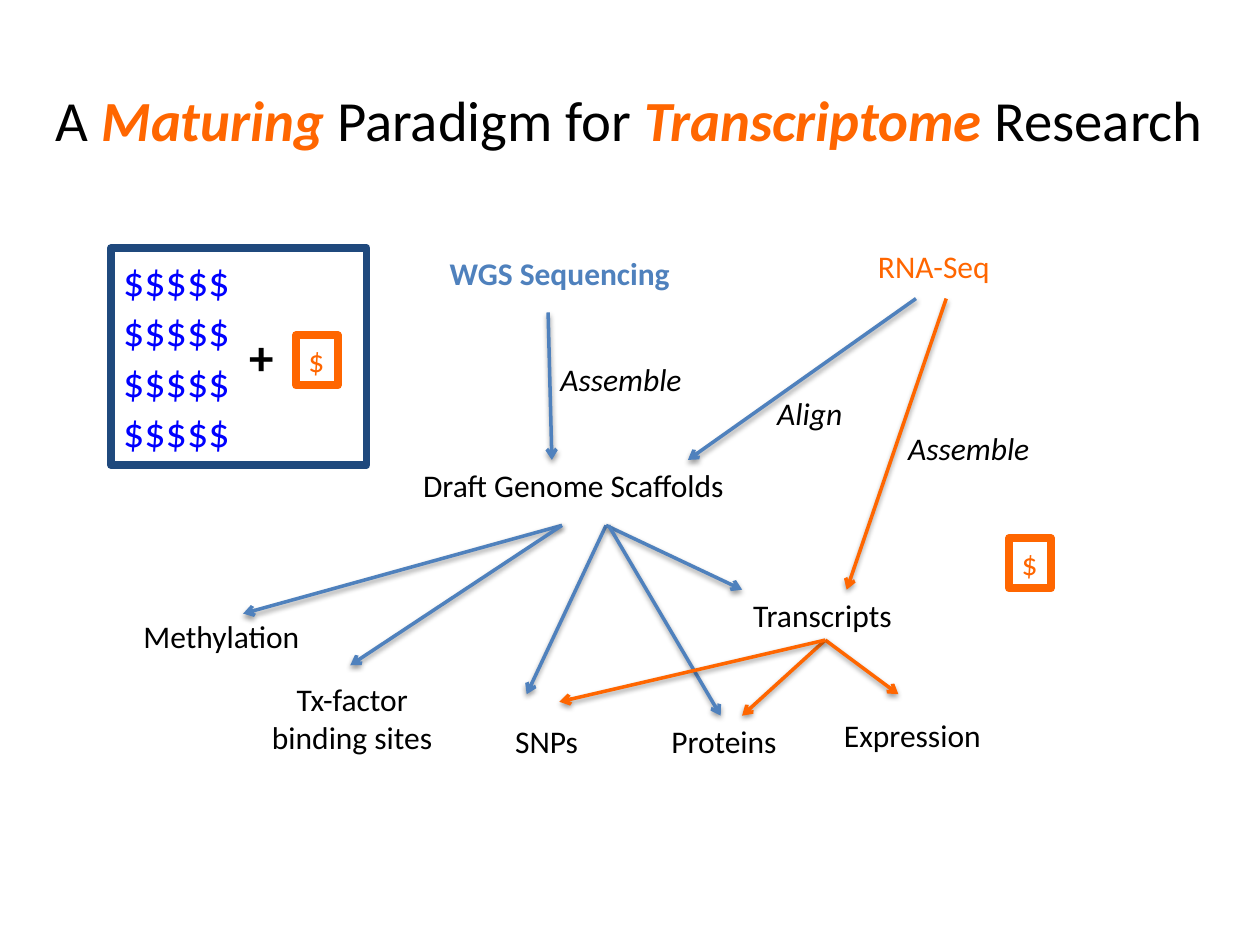
from lxml import etree
from pptx import Presentation
from pptx import util as u
from pptx.dml.color import RGBColor
from pptx.enum import shapes, text
from pptx.oxml import parse_xml
from pptx.oxml.ns import nsdecls, qn

COLORS = {"black": "000000", "blue": "4F81BD", "navy": "1F497D",
          "money": "0000FF", "orange": "FF6600"}

# Grid of 100 columns by 75 rows
deck = Presentation()
deck.slide_width, deck.slide_height = u.Inches(10), u.Inches(7.5)
COL, ROW = deck.slide_width / 100, deck.slide_height / 75
slide = deck.slides.add_slide(deck.slide_layouts[5])


def place(left, top, width, height):
    return int(left * COL), int(top * ROW), int(width * COL), int(height * ROW)


def write(paragraph, words, size=18, color="black", bold=False, italic=False,
          align=text.PP_ALIGN.LEFT):
    paragraph.alignment = align
    for i, line in enumerate(words.split("\n")):
        if i:
            paragraph.add_line_break()
        run = paragraph.add_run()
        run.text = line
        run.font.name, run.font.size = "Calibri", u.Pt(size)
        run.font.bold, run.font.italic = bold, italic
        run.font.color.rgb = RGBColor.from_string(COLORS[color])


# Title
title = slide.shapes.title
title.left, title.top, title.width, title.height = place(2.1, 3.2, 95.7, 12.5)
title.text_frame.vertical_anchor = text.MSO_ANCHOR.MIDDLE
for words, stressed in [("A ", False), ("Maturing", True), (" Paradigm for ", False),
                        ("Transcriptome ", True), ("Research", False)]:
    write(title.text_frame.paragraphs[0], words, size=32.4, bold=stressed, italic=stressed,
          color="orange" if stressed else "black", align=text.PP_ALIGN.CENTER)

# Steps and products of the workflow
labels = [
    ("WGS Sequencing", (34.7, 19.7, 19.8, 4), dict(color="blue", bold=True)),
    ("RNA-Seq", (68.7, 19.1, 11, 4), dict(color="orange")),
    ("Assemble", (43.5, 28.1, 12.3, 4), dict(italic=True)),
    ("Align", (60.7, 30.8, 7.9, 4), dict(italic=True)),
    ("Assemble", (71.1, 33.6, 12.3, 4), dict(italic=True)),
    ("Draft Genome Scaffolds", (32.6, 36.5, 26.3, 4), {}),
    ("Transcripts", (58.8, 46.8, 13.4, 4), {}),
    ("Methylation", (10.4, 48.5, 14.6, 4), {}),
    ("Tx-factor\nbinding sites", (20.5, 53.5, 14.9, 7.1), dict(align=text.PP_ALIGN.CENTER)),
    ("SNPs", (39.9, 56.8, 7.1, 4), {}),
    ("Proteins", (52.3, 56.8, 10.6, 4), {}),
    ("Expression", (66, 56.3, 13, 4), {}),
    ("+", (18.8, 25.4, 4, 5.7), dict(size=28, bold=True)),
]
for words, cell, style in labels:
    label = slide.shapes.add_textbox(*place(*cell))
    label.text_frame.word_wrap = False
    label.text_frame.auto_size = text.MSO_AUTO_SIZE.SHAPE_TO_FIT_TEXT
    write(label.text_frame.paragraphs[0], words, **style)

# Arrows: colour, start, ends
SHADOW = f"""<a:effectLst {nsdecls('a')}>
  <a:outerShdw blurRad="{u.Pt(3.1)}" dist="{u.Pt(1.6)}" dir="5400000" rotWithShape="0">
    <a:srgbClr val="000000"><a:alpha val="38000"/></a:srgbClr>
  </a:outerShdw></a:effectLst>"""
flows = [
    ("blue", (43.5, 24.8), [(43.8, 36.5)]),
    ("blue", (72.7, 23.7), [(54.6, 36.5)]),
    ("blue", (44.6, 41.7), [(19.3, 48.7), (27.8, 52.8)]),
    ("blue", (48.1, 41.7), [(41.8, 55.1), (58.9, 46.8)]),
    ("blue", (48.3, 41.7), [(57.2, 56.8)]),
    ("orange", (75.1, 23.7), [(67.2, 46.8)]),
    ("orange", (65.5, 50.8), [(58.9, 56.8), (71.3, 55.1), (44.4, 55.7)]),
]
for color, start, ends in flows:
    for end in ends:
        arrow = slide.shapes.add_connector(shapes.MSO_CONNECTOR.STRAIGHT, *place(*start, *end))
        arrow.line.color.rgb = RGBColor.from_string(COLORS[color])
        arrow.line.width = u.Pt(2)
        etree.SubElement(arrow.line._get_or_add_ln(), qn("a:tailEnd"), type="arrow")
        arrow._element.spPr.append(parse_xml(SHADOW))

# Cost boxes: genome plus RNA-Seq at left, RNA-Seq alone at right
costs = [
    (["$$$$$"] * 4, (8.8, 19.7, 20.3, 17.2), "navy", 24, "money"),
    (["$"], (80.1, 42.7, 3.3, 4), "orange", 18, "orange"),
    (["$"], (23.5, 26.6, 3.3, 4), "orange", 18, "orange"),
]
for rows, cell, border, size, color in costs:
    cost = slide.shapes.add_shape(shapes.MSO_SHAPE.RECTANGLE, *place(*cell))
    cost.shadow.inherit = False
    cost.fill.background()
    cost.line.color.rgb = RGBColor.from_string(COLORS[border])
    cost.line.width = u.Pt(4.5)
    frame = cost.text_frame
    frame.word_wrap = len(rows) > 1
    frame.auto_size = text.MSO_AUTO_SIZE.SHAPE_TO_FIT_TEXT
    frame.vertical_anchor = text.MSO_ANCHOR.TOP
    for i, row in enumerate(rows):
        paragraph = frame.add_paragraph() if i else frame.paragraphs[0]
        write(paragraph, row, size=size, color=color)

deck.save("out.pptx")
